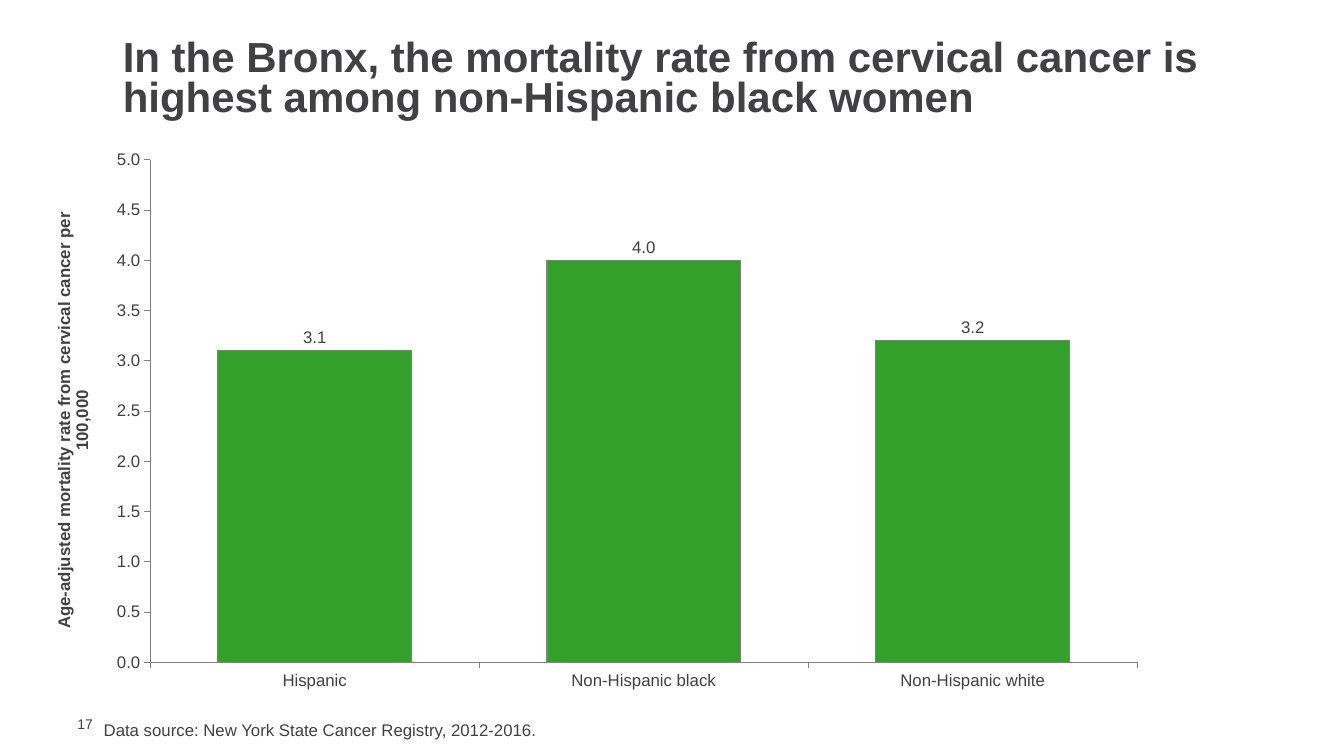
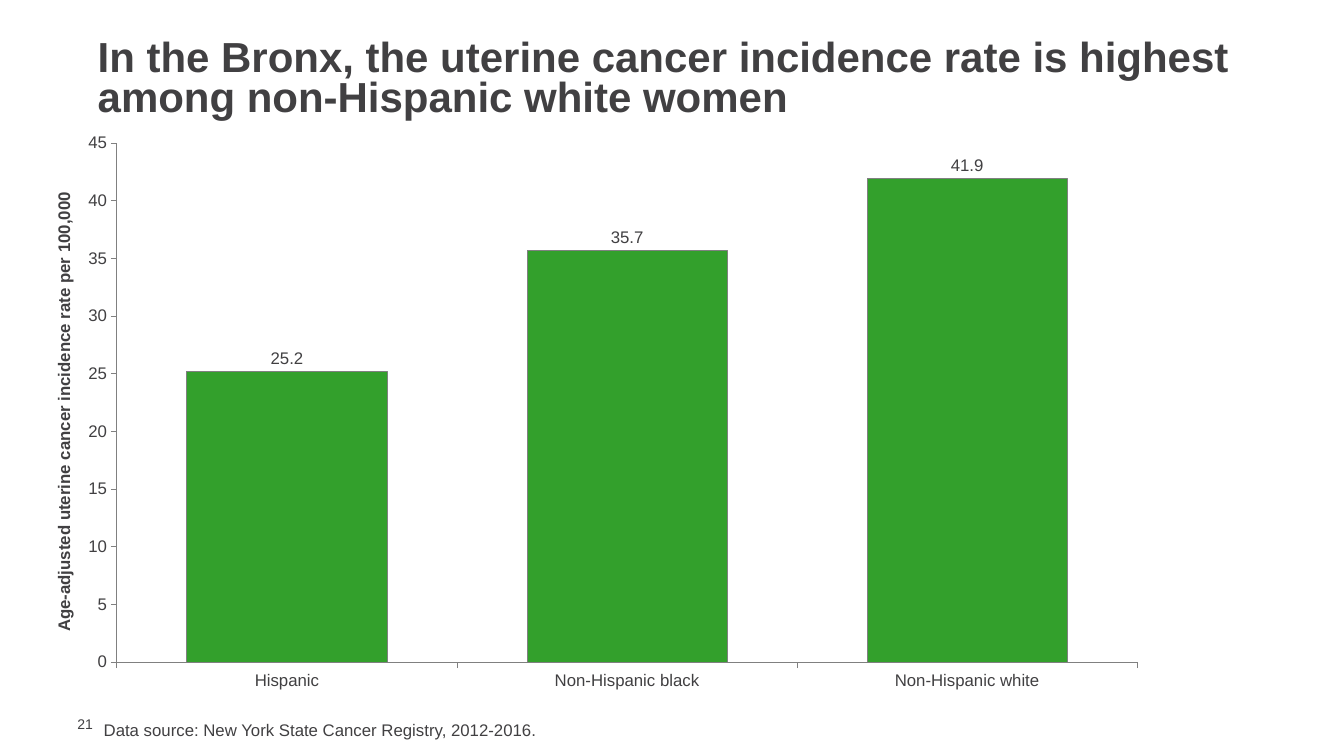
import pptx
import pptx.chart.data
import pptx.dml.color
import pptx.enum.chart
import pptx.enum.text
import pptx.oxml
import pptx.util
from pptx.util import Inches

COLORS = {"text": "414042", "bar": "33A02C", "line": "808080", "page": "FFFFFF"}
FONT = "Arial"
SOURCE = "Data source: New York State Cancer Registry, 2012-2016."
GROUPS = ["Hispanic", "Non-Hispanic black", "Non-Hispanic white"]
SLIDES = [
    {
        "number": "17",
        "title": "In the Bronx, the mortality rate from cervical cancer is "
                 "highest among non-Hispanic black women",
        "title_box": (1.12, 0.34, 11.08, 0.91),
        "axis_title": "Age-adjusted mortality rate from cervical cancer per 100,000",
        "rates": [3.1, 4.0, 3.2],
        "axis": (5, 0.5, "0.0"),
        "label_format": "#,##0.0",
        "chart_box": (0.5, 1.42, 11, 5.54),
        "plot": {"x": 0.09, "y": 0.03, "w": 0.89, "h": 0.9},
    },
    {
        "number": "21",
        "title": "In the Bronx, the uterine cancer incidence rate is highest "
                 "among non-Hispanic white women",
        "title_box": (0.87, 0.34, 11.58, 0.91),
        "axis_title": "Age-adjusted uterine cancer incidence rate per 100,000",
        "rates": [25.2, 35.7, 41.9],
        "axis": (45, 5, "0"),
        "label_format": "0.0",
        "chart_box": (0.5, 1.25, 11, 5.72),
        "plot": {"x": 0.06, "y": 0.03, "w": 0.92, "h": 0.9},
    },
]


def rgb(name):
    return pptx.dml.color.RGBColor.from_string(COLORS[name])


def style_font(font, size, bold=False):
    font.name = FONT
    font.size = pptx.util.Pt(size)
    font.bold = bold
    font.color.rgb = rgb("text")


def style_line(line):
    line.color.rgb = rgb("line")
    line.width = pptx.util.Pt(0.75)


def add_text(s, box, text, size, bold=False, middle=False, spacing=None, insets=None):
    tf = s.shapes.add_textbox(*map(Inches, box)).text_frame
    tf.word_wrap = True
    if middle:
        tf.vertical_anchor = pptx.enum.text.MSO_ANCHOR.MIDDLE
    if insets:
        tf.margin_left, tf.margin_top, tf.margin_right, tf.margin_bottom = map(Inches, insets)
    p = tf.paragraphs[0]
    if spacing:
        p.line_spacing = spacing
    r = p.add_run()
    r.text = text
    style_font(r.font, size, bold)


def place_plot(chart, plot):
    area = chart.element.xpath(".//c:plotArea")[0]
    for old in area.xpath("./c:layout"):
        area.remove(old)
    modes = "".join(f'<c:{k}Mode val="edge"/>' for k in "xy")
    sizes = "".join(f'<c:{k} val="{v}"/>' for k, v in plot.items())
    area.insert(0, pptx.oxml.parse_xml(
        '<c:layout xmlns:c="http://schemas.openxmlformats.org/drawingml/2006/chart">'
        f'<c:manualLayout><c:layoutTarget val="inner"/>{modes}{sizes}'
        '</c:manualLayout></c:layout>'))


def add_rate_chart(s, item):
    data = pptx.chart.data.CategoryChartData()
    data.categories = GROUPS
    data.add_series("Series 1", item["rates"])
    chart = s.shapes.add_chart(
        pptx.enum.chart.XL_CHART_TYPE.COLUMN_CLUSTERED,
        *map(Inches, item["chart_box"]), data).chart
    chart.has_legend = False
    chart.has_title = False
    style_font(chart.font, 10)

    for axis in (chart.category_axis, chart.value_axis):
        axis.has_major_gridlines = False
        axis.major_tick_mark = pptx.enum.chart.XL_TICK_MARK.OUTSIDE
        axis.minor_tick_mark = pptx.enum.chart.XL_TICK_MARK.NONE
        style_font(axis.tick_labels.font, 12)
        style_line(axis.format.line)

    axis = chart.value_axis
    axis.minimum_scale = 0
    axis.maximum_scale, axis.major_unit, number_format = item["axis"]
    axis.tick_labels.number_format = number_format
    axis.tick_labels.number_format_is_linked = False
    r = axis.axis_title.text_frame.paragraphs[0].add_run()
    r.text = item["axis_title"]
    style_font(r.font, 12, True)
    body = chart.element.xpath(".//c:valAx/c:title//a:bodyPr")[0]
    body.set("rot", "-5400000")
    body.set("vert", "horz")

    plot = chart.plots[0]
    plot.gap_width = 70
    plot.vary_by_categories = False
    bars = plot.series[0]
    bars.format.fill.solid()
    bars.format.fill.fore_color.rgb = rgb("bar")
    style_line(bars.format.line)
    labels = bars.data_labels
    labels.show_value = True
    labels.number_format = item["label_format"]
    labels.number_format_is_linked = False
    labels.position = pptx.enum.chart.XL_LABEL_POSITION.OUTSIDE_END
    style_font(labels.font, 12)
    place_plot(chart, item["plot"])


def main():
    prs = pptx.Presentation()
    prs.slide_width, prs.slide_height = Inches(13.33), Inches(7.5)
    for item in SLIDES:
        s = prs.slides.add_slide(prs.slide_layouts[6])
        s.background.fill.solid()
        s.background.fill.fore_color.rgb = rgb("page")
        add_text(s, (0.67, 7.1, 0.43, 0.17), item["number"], 10,
                 middle=True, insets=(0.1, 0, 0, 0))
        add_text(s, item["title_box"], item["title"], 30,
                 bold=True, middle=True, spacing=0.8)
        add_rate_chart(s, item)
        add_text(s, (0.93, 7.09, 9.92, 0.3), SOURCE, 12)
    prs.save("out.pptx")


if __name__ == "__main__":
    main()
